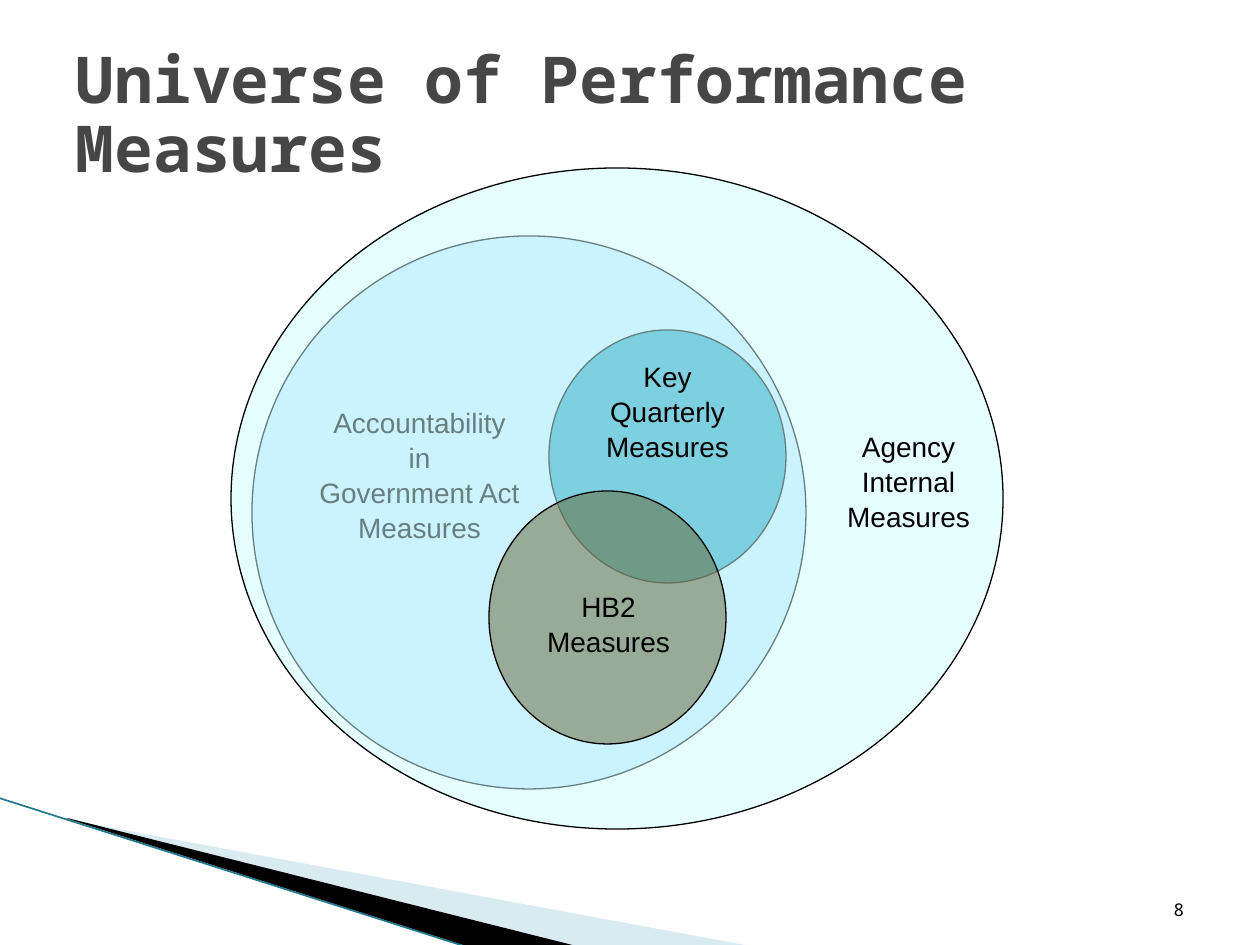
from pptx import Presentation
from pptx import util as u
from pptx.dml.color import RGBColor
from pptx.enum import shapes, text
from pptx.oxml.ns import qn
from lxml import etree

PX = 914400 / 126
BLACK = RGBColor(0x00, 0x00, 0x00)
GREY = RGBColor(0x46, 0x46, 0x46)
PALE_BLUE = RGBColor(0xA0, 0xCB, 0xDC)
TEAL = RGBColor(0x21, 0x79, 0x8F)
SKY = RGBColor(0x99, 0xCC, 0xFF)
CYAN = RGBColor(0x2D, 0xA2, 0xBF)
AQUA = RGBColor(0xCC, 0xFF, 0xFF)
OLIVE = RGBColor(0x66, 0x66, 0x33)
ARIAL = "Arial"
MONO = "Noto Sans Mono"

prs = Presentation()
prs.slide_width = round(1260 * PX)
prs.slide_height = round(945 * PX)
s = prs.slides.add_slide(prs.slide_layouts[6])


def fill(sp, color, opacity):
    sp.shadow.inherit = False
    sp.fill.solid()
    sp.fill.fore_color.rgb = color
    if opacity < 100:
        clr = sp.fill._xPr.find(qn("a:solidFill"))[0]
        etree.SubElement(clr, qn("a:alpha"), val=str(opacity * 1000))


def add_text(box, lines, font, size, color, align, anchor, inset, spacing, bold=False):
    tb = s.shapes.add_textbox(*(round(v * PX) for v in box))
    tf = tb.text_frame
    tf.word_wrap = True
    tf.vertical_anchor = anchor
    tf.margin_left = tf.margin_right = round(inset[0] * PX)
    tf.margin_top = tf.margin_bottom = round(inset[1] * PX)
    for i, line in enumerate(lines):
        p = tf.add_paragraph() if i else tf.paragraphs[0]
        p.text = line
        p.alignment = align
        p.line_spacing = spacing
        p.font.name = font
        p.font.size = u.Pt(size)
        p.font.bold = bold
        p.font.color.rgb = color


wedges = [
    ([(69, 820), (750, 946), (575, 946), (69, 819)], PALE_BLUE, 40),
    ([(67, 818), (576, 946), (469, 947), (68, 819)], BLACK, 100),
]
for points, color, opacity in wedges:
    fb = s.shapes.build_freeform(*points[0], scale=PX)
    fb.add_line_segments(points[1:], close=True)
    sp = fb.convert_to_shape()
    fill(sp, color, opacity)
    sp.line.fill.background()

cx = s.shapes.add_connector(
    shapes.MSO_CONNECTOR.STRAIGHT, *(round(v * PX) for v in (-1, 798, 467, 947))
)
cx.line.color.rgb = TEAL
cx.line.width = u.Pt(0.95)
etree.SubElement(cx._element.spPr, qn("a:effectLst"))

left, center, right = text.PP_ALIGN.LEFT, text.PP_ALIGN.CENTER, text.PP_ALIGN.RIGHT
top, middle, bottom = text.MSO_ANCHOR.TOP, text.MSO_ANCHOR.MIDDLE, text.MSO_ANCHOR.BOTTOM

add_text((63, 38, 1134, 158), ["Universe of Performance Measures"],
         MONO, 36.9, GREY, left, middle, (13, 6), 0.9, True)

diagram = [
    ((252, 236, 554, 553), SKY, 50),
    ((291, 399, 257, 184), ["Accountability", "in", "Government Act Measures"]),
    ((549, 330, 237, 253), CYAN, 100),
    ((231, 168, 772, 661), AQUA, 50),
    ((489, 491, 237, 253), OLIVE, 50),
    ((529, 583, 159, 115), ["HB2 Measures"]),
    ((588, 353, 159, 139), ["Key Quarterly Measures"]),
    ((829, 423, 159, 139), ["Agency Internal Measures"]),
]
for box, content, *opacity in diagram:
    if opacity:
        sp = s.shapes.add_shape(shapes.MSO_SHAPE.OVAL, *(round(v * PX) for v in box))
        fill(sp, content, opacity[0])
        sp.line.color.rgb = BLACK
        sp.line.width = u.Pt(0.75)
    else:
        add_text(box, content, ARIAL, 16, BLACK, center, top, (11, 5), 1.04)

add_text((903, 861, 294, 65), ["8"], MONO, 10, BLACK, right, bottom, (13, 6), 1.0)

prs.save("out.pptx")
